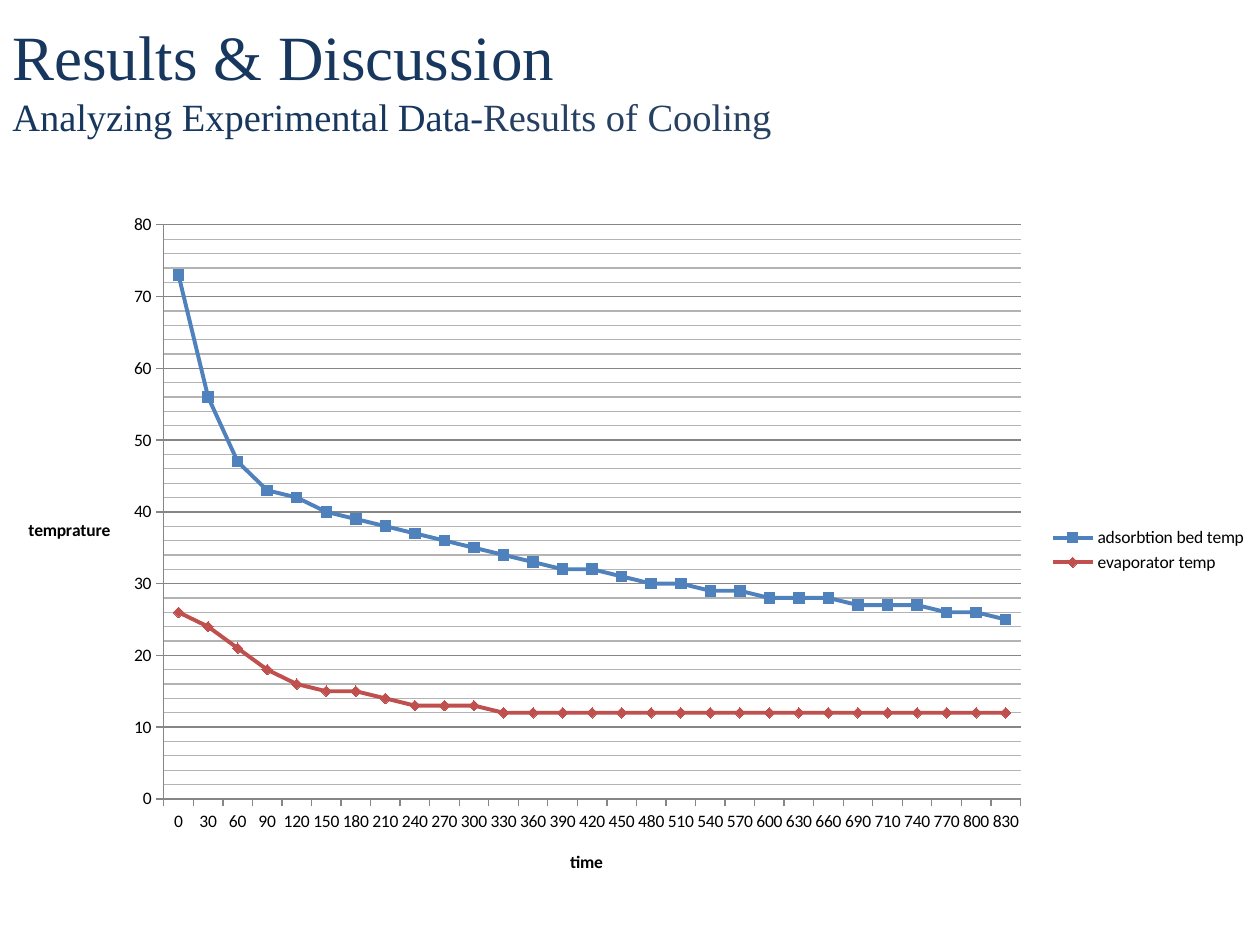
from dataclasses import dataclass

from lxml.etree import SubElement
from pptx import Presentation
from pptx.chart.data import CategoryChartData as ChartData
from pptx.dml.color import RGBColor as RGB
from pptx.enum.chart import XL_CHART_TYPE as Kind
from pptx.enum.chart import XL_LEGEND_POSITION as Legend
from pptx.enum.chart import XL_MARKER_STYLE as Mark
from pptx.enum.chart import XL_TICK_MARK as Tick
from pptx.enum.text import MSO_ANCHOR as Anchor
from pptx.oxml.ns import qn
from pptx.util import Inches, Pt


@dataclass(frozen=True)
class Theme:
    serif: str = "Times New Roman"
    sans: str = "Calibri"
    navy: str = "17375E"
    slate: str = "254061"
    black: str = "000000"
    axis: str = "868686"
    minor: str = "B3B3B3"
    head: float = 36
    sub: float = 22
    gap: float = 20
    label: float = 10


THEME = Theme()

TIMES = [*range(0, 691, 30), *range(710, 801, 30), 830]
BED = [73, 56, 47, 43, 42, 40, 39, 38, 37, 36, 35, 34, 33, 32, 32,
       31, 30, 30, 29, 29, 28, 28, 28, 27, 27, 27, 26, 26, 25]
EVAP = [26, 24, 21, 18, 16, 15, 15, 14, 13, 13, 13] + [12] * 18
# name, values, colour, marker style, marker size
SERIES = [
    ("adsorbtion bed temp", BED, "4F81BD", Mark.SQUARE, 6),
    ("evaporator temp", EVAP, "C0504D", Mark.DIAMOND, 6),
]


def style(font, size, color, name, bold=False):
    font.size, font.name, font.bold = Pt(size), name, bold
    font.color.rgb = RGB.from_string(color)


def stroke(line, color, width=0.75):
    line.color.rgb = RGB.from_string(color)
    line.width = Pt(width)


def add_run(para, text, size, color):
    run = para.add_run()
    run.text = text
    style(run.font, size, color, THEME.serif)


def add_title(slide):
    box = slide.shapes.add_textbox(0, 0, Inches(9), Inches(1.25))
    frame = box.text_frame
    frame.word_wrap = True
    frame.vertical_anchor = Anchor.MIDDLE
    para = frame.paragraphs[0]
    add_run(para, "Results & Discussion", THEME.head, THEME.navy)
    para.add_line_break()
    add_run(para, "Analyzing Experimental", THEME.sub, THEME.navy)
    add_run(para, " ", THEME.gap, THEME.navy)
    add_run(para, "Data-", THEME.sub, THEME.navy)
    add_run(para, "Results of Cooling", THEME.sub, THEME.slate)


def place(part, inner=False, **spots):
    """Fix a chart part at fractions of the chart's size."""
    layout = part.find(qn("c:layout"))
    if layout is None:
        layout = SubElement(part, qn("c:layout"))
        part.insert(0 if part.find(qn("c:tx")) is None else 1, layout)
    manual = SubElement(layout, qn("c:manualLayout"))
    if inner:
        SubElement(manual, qn("c:layoutTarget")).set("val", "inner")
    for tag in ("xMode", "yMode"):
        SubElement(manual, qn(f"c:{tag}")).set("val", "edge")
    for tag, value in spots.items():
        SubElement(manual, qn(f"c:{tag}")).set("val", str(value))


def set_axis(axis, title, x, y):
    frame = axis.axis_title.text_frame
    run = frame.paragraphs[0].add_run()
    run.text = title
    style(run.font, THEME.label, THEME.black, THEME.sans, True)
    body = frame._txBody.find(qn("a:bodyPr"))
    body.set("rot", "0")
    body.set("vert", "horz")
    place(axis.axis_title._element, x=x, y=y)
    axis.major_tick_mark = Tick.OUTSIDE
    axis.minor_tick_mark = Tick.NONE
    stroke(axis.format.line, THEME.axis)


def set_scale(axis):
    axis.minimum_scale, axis.maximum_scale = 0, 80
    axis.major_unit, axis.minor_unit = 10, 2
    axis.has_major_gridlines = axis.has_minor_gridlines = True
    stroke(axis.major_gridlines.format.line, THEME.axis)
    minor = axis._element.find(qn("c:minorGridlines"))
    props = SubElement(minor, qn("c:spPr"))
    line = SubElement(props, qn("a:ln"), w=str(Pt(0.75)))
    fill = SubElement(line, qn("a:solidFill"))
    SubElement(fill, qn("a:srgbClr"), val=THEME.minor)


def paint(series, color, mark, size):
    series.smooth = False
    stroke(series.format.line, color, 2.25)
    series.marker.style, series.marker.size = mark, size
    fill = series.marker.format.fill
    fill.solid()
    fill.fore_color.rgb = RGB.from_string(color)
    stroke(series.marker.format.line, color)


def add_graph(slide):
    data = ChartData()
    data.categories = [str(time) for time in TIMES]
    for name, values, *_ in SERIES:
        data.add_series(name, values)
    chart = slide.shapes.add_chart(
        Kind.LINE_MARKERS, 0, Inches(1.62), Inches(10), Inches(5.49), data
    ).chart
    chart.has_title = False
    style(chart.font, THEME.label, THEME.black, THEME.sans)
    chart.has_legend = True
    chart.legend.position = Legend.RIGHT
    chart.legend.include_in_layout = False
    set_axis(chart.category_axis, "time", 0.45, 0.93)
    set_axis(chart.value_axis, "temprature", 0.02, 0.45)
    set_scale(chart.value_axis)
    plot = chart.plots[0]
    plot.vary_by_categories = False
    for series, (_, _, color, mark, size) in zip(plot.series, SERIES):
        paint(series, color, mark, size)
    area = chart._chartSpace.chart.plotArea
    place(area, inner=True, x=0.13, y=0.03, w=0.68, h=0.83)


def main():
    deck = Presentation()
    deck.slide_width, deck.slide_height = Inches(10), Inches(7.5)
    slide = deck.slides.add_slide(deck.slide_layouts[6])
    add_title(slide)
    add_graph(slide)
    deck.save("out.pptx")


if __name__ == "__main__":
    main()
